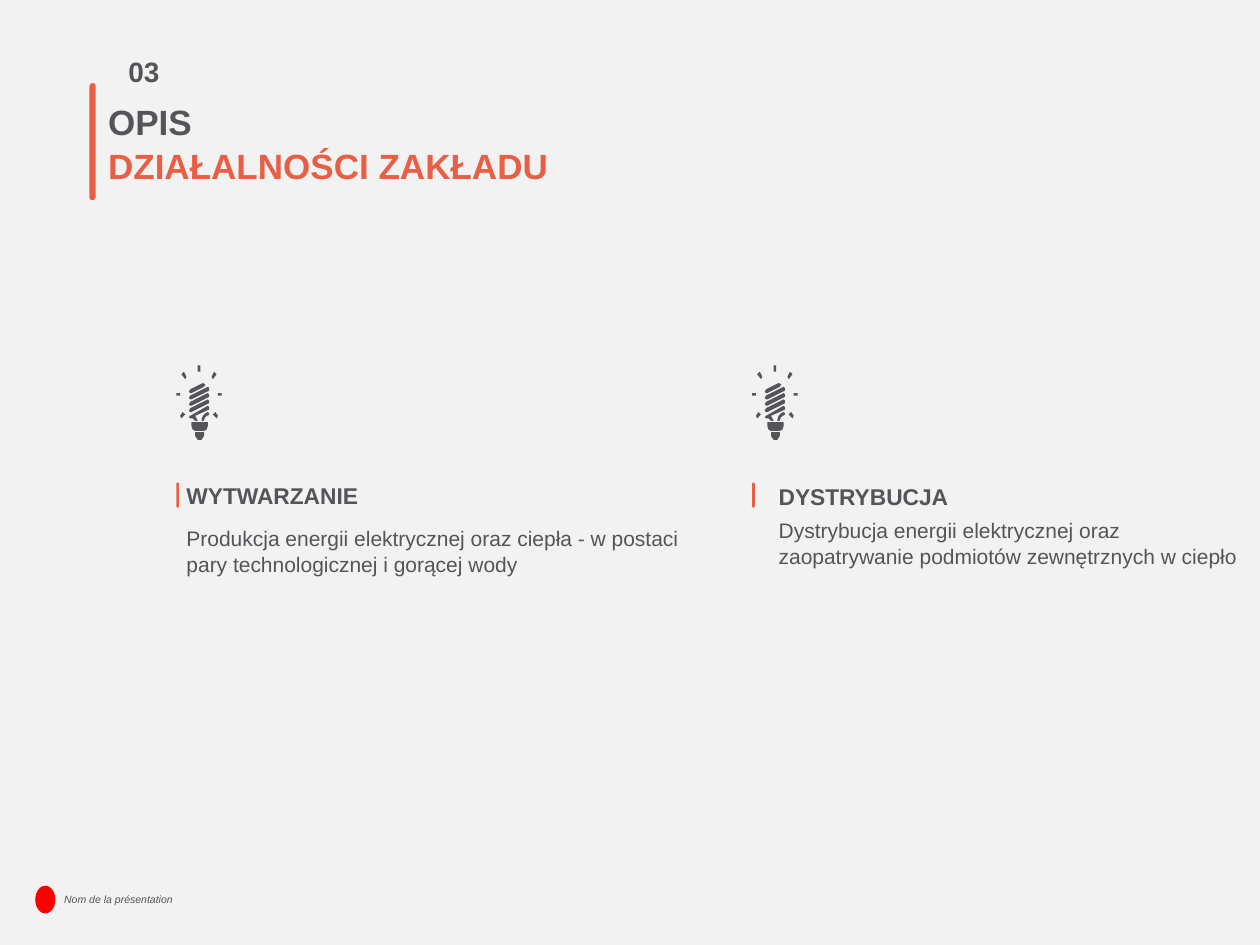
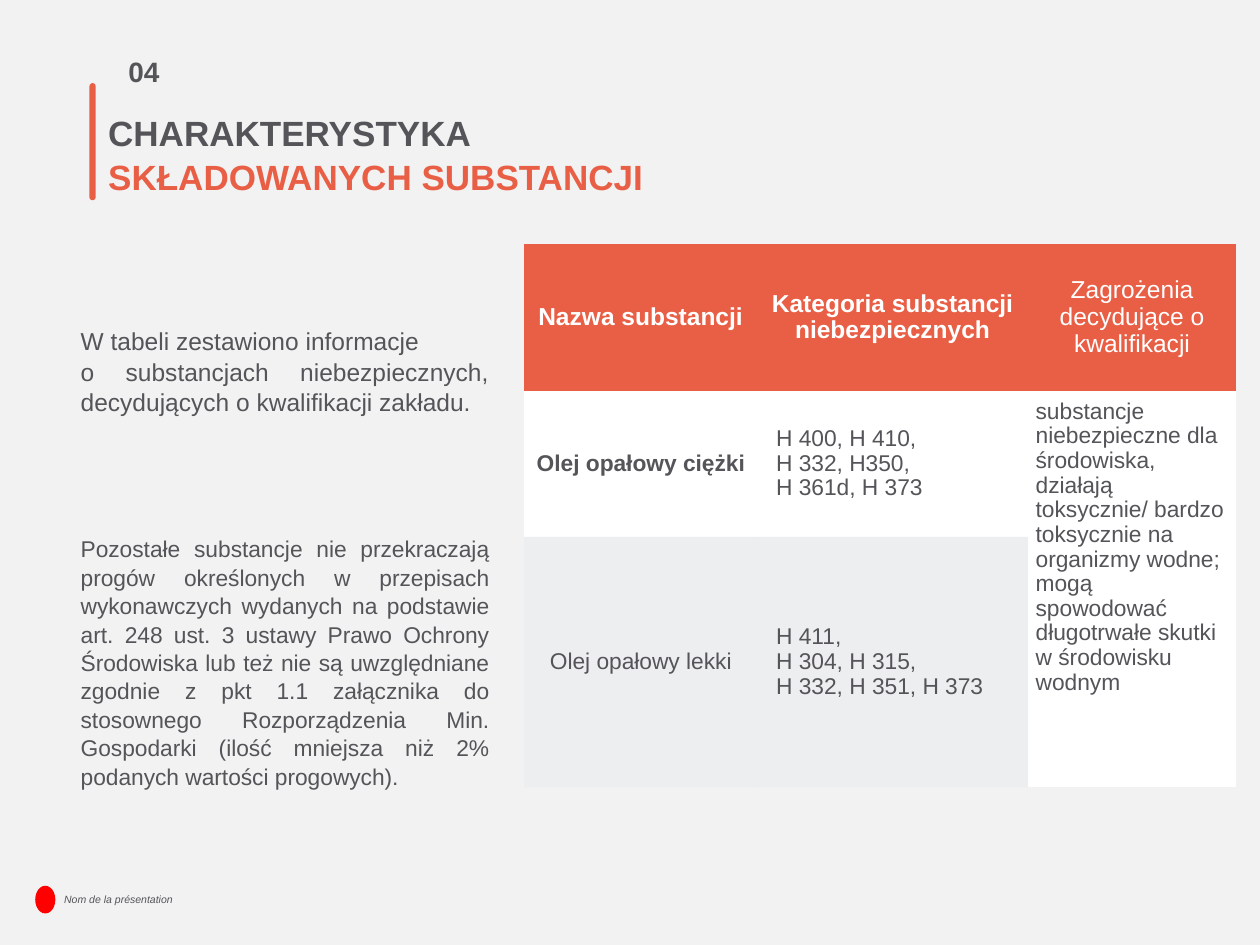
import dataclasses
import typing

import lxml.etree
import pptx
import pptx.dml.color
import pptx.enum.shapes
import pptx.enum.text
import pptx.oxml.ns
import pptx.util

Align = pptx.enum.text.PP_ALIGN
Anchor = pptx.enum.text.MSO_ANCHOR
Preset = pptx.enum.shapes.MSO_SHAPE
Point = tuple[float, float]


# Theme: colours, type sizes and spacing
@dataclasses.dataclass(frozen=True)
class Theme:
    font: str = "Arial"
    background: str = "F2F2F2"
    text: str = "545459"
    accent: str = "E85F46"
    emblem: str = "FF0000"
    white: str = "FFFFFF"
    shaded: str = "E3E5E8"
    shaded_opacity: int = 29
    title_size: int = 20
    number_size: int = 16
    lead_size: int = 14
    heading_size: int = 13
    body_size: int = 12
    footer_size: int = 6
    text_spacing: float = 1.04
    table_spacing: float = 0.97


THEME = Theme()

# Grid: 100 columns by 75 rows of square units
SLIDE_WIDTH = pptx.util.Inches(10)
SLIDE_HEIGHT = pptx.util.Inches(7.5)
UNIT = SLIDE_WIDTH / 100


def units(count: float) -> int:
    return round(count * UNIT)


class Box(typing.NamedTuple):
    column: float
    row: float
    columns: float
    rows: float

    def lengths(self) -> list[int]:
        return [units(value) for value in self]


@dataclasses.dataclass(frozen=True)
class Header:
    number: str
    title: tuple[str, str]
    title_box: Box


@dataclasses.dataclass(frozen=True)
class Activity:
    column: float
    heading: str
    heading_box: Box
    description: str
    description_box: Box


@dataclasses.dataclass(frozen=True)
class Cell:
    text: str
    fill: str = THEME.white
    color: str = THEME.text
    size: int = THEME.heading_size
    bold: bool = False
    align: Align = Align.CENTER
    anchor: Anchor = Anchor.MIDDLE
    indent: float = 0
    opacity: int = 100


HEADERS = [
    Header("03", ("OPIS", "DZIAŁALNOŚCI ZAKŁADU"), Box(7.6, 4.1, 42.3, 14.4)),
    Header("04", ("CHARAKTERYSTYKA", "SKŁADOWANYCH SUBSTANCJI"), Box(7.6, 5, 46.8, 14.4)),
]

ACTIVITIES = [
    Activity(14, "WYTWARZANIE", Box(14.6, 38.2, 16.1, 2.2),
             "Produkcja energii elektrycznej oraz ciepła - w postaci "
             "pary technologicznej i gorącej wody", Box(14.6, 41.4, 40.9, 9.3)),
    Activity(59.7, "DYSTRYBUCJA", Box(61.6, 37.9, 17.1, 2.9),
             "Dystrybucja energii elektrycznej oraz "
             "zaopatrywanie podmiotów zewnętrznych w ciepło", Box(61.6, 40.8, 37.5, 9.3)),
]

INTRODUCTION = ("W tabeli zestawiono informacje\n"
                "o substancjach niebezpiecznych, decydujących o kwalifikacji zakładu.")
REMAINING_SUBSTANCES = (
    "Pozostałe substancje nie przekraczają progów określonych w przepisach "
    "wykonawczych wydanych na podstawie\vart. 248 ust. 3 ustawy Prawo Ochrony "
    "Środowiska lub też nie są uwzględniane zgodnie z pkt 1.1 załącznika do "
    "stosownego Rozporządzenia Min. Gospodarki (ilość mniejsza niż 2% "
    "podanych wartości progowych).")

# Substance table
header_cell = dict(fill=THEME.accent, color=THEME.white, size=THEME.lead_size)
shaded_cell = dict(fill=THEME.shaded, opacity=THEME.shaded_opacity)
category_cell = dict(align=Align.LEFT, indent=0.9)
TABLE_COLUMNS = [18.5, 21.5, 16.5]
TABLE_ROWS = [11.6, 11.6, 19.9]
SUBSTANCES = [
    [Cell("Nazwa substancji", bold=True, **header_cell),
     Cell("Kategoria substancji niebezpiecznych", bold=True, **header_cell),
     Cell("Zagrożenia decydujące o kwalifikacji", **header_cell)],
    [Cell("Olej opałowy ciężki", bold=True),
     Cell("H 400, H 410,\nH 332, H350,\nH 361d, H 373", **category_cell),
     Cell("substancje niebezpieczne dla środowiska, działają toksycznie/ bardzo "
          "toksycznie na organizmy wodne; mogą spowodować długotrwałe skutki "
          "w środowisku wodnym", align=Align.LEFT, anchor=Anchor.TOP)],
    [Cell("Olej opałowy lekki", **shaded_cell),
     Cell("H 411,\nH 304, H 315,\nH 332, H 351, H 373", **category_cell, **shaded_cell)],
]


# Bulb outline, in tenths of a grid unit
def bulb_contours() -> list[list[Point]]:
    right_rays = [
        [(33, 22), (36, 22), (36, 24), (33, 24)],
        [(30, 5), (32, 7), (29, 11), (28, 9)],
        [(31, 37), (33, 40), (32, 42), (29, 39)],
    ]
    left_rays = [[(36 - x, y) for x, y in ray] for ray in right_rays]
    coils = [[(25, y), (26, y + 1), (26, y + 3), (12, y + 10),
              (11, y + 10), (10, y + 9), (11, y + 7)] for y in (17, 22, 27)]
    top_coil = [(21, 14), (23, 15), (22, 17), (12, 22), (11, 22), (10, 21), (11, 19)]
    bottom_coil = [(25, 32), (26, 33), (26, 35), (15, 40), (17, 44),
                   (15, 44), (13, 42), (11, 42), (10, 41), (11, 40)]
    stem = [(25, 37), (26, 38), (26, 39), (23, 41), (22, 43),
            (22, 44), (20, 44), (20, 43), (21, 40), (23, 38)]
    collar = [(12, 45), (25, 45), (25, 48), (24, 51), (22, 52), (15, 52), (13, 51), (12, 48)]
    tip = [(15, 53), (22, 53), (22, 56), (20, 59), (17, 59), (15, 56)]
    top_ray = [(17, 0), (19, 0), (19, 5), (17, 5)]
    return [top_ray, *right_rays, *left_rays, top_coil, *coils, bottom_coil, stem, collar, tip]


# Drawing functions
def rgb(color: str) -> pptx.dml.color.RGBColor:
    return pptx.dml.color.RGBColor.from_string(color)


def paint(shape, color: str) -> None:
    shape.fill.solid()
    shape.fill.fore_color.rgb = rgb(color)
    shape.line.fill.background()
    shape.shadow.inherit = False


def write(frame, text: str, *, size: int, colors: typing.Sequence[str] = (THEME.text,),
          bold: bool = False, italic: bool = False, align: Align = Align.LEFT,
          spacing: float = THEME.text_spacing, before: float = 0, append: bool = False) -> None:
    """Write one paragraph per line; the last colour serves any further lines."""
    for index, line in enumerate(text.split("\n")):
        new = append or index > 0
        paragraph = frame.add_paragraph() if new else frame.paragraphs[0]
        paragraph.alignment = align
        paragraph.line_spacing = spacing
        paragraph.space_before = pptx.util.Pt(before)
        for part_index, part in enumerate(line.split("\v")):
            if part_index:
                paragraph.add_line_break()
            run = paragraph.add_run()
            run.text = part
            run.font.name = THEME.font
            run.font.size = pptx.util.Pt(size)
            run.font.bold = bold
            run.font.italic = italic
            run.font.color.rgb = rgb(colors[min(index, len(colors) - 1)])


def add_frame(slide, box: Box, *, inset: Point = (0.2, 0.2), anchor: Anchor = Anchor.TOP):
    frame = slide.shapes.add_textbox(*box.lengths()).text_frame
    frame.word_wrap = True
    frame.vertical_anchor = anchor
    frame.margin_left = frame.margin_right = units(inset[0])
    frame.margin_top = frame.margin_bottom = units(inset[1])
    return frame


def add_bar(slide, box: Box) -> None:
    bar = slide.shapes.add_shape(Preset.ROUNDED_RECTANGLE, *box.lengths())
    bar.adjustments[0] = 0.5
    paint(bar, THEME.accent)


def add_bulb(slide, column: float, row: float) -> None:
    first, *others = bulb_contours()
    builder = slide.shapes.build_freeform(*first[0], scale=UNIT / 10)
    builder.add_line_segments(first[1:], close=True)
    for contour in others:
        builder.move_to(*contour[0])
        builder.add_line_segments(contour[1:], close=True)
    paint(builder.convert_to_shape(units(column), units(row)), THEME.text)


def add_base_slide(presentation, header: Header):
    slide = presentation.slides.add_slide(presentation.slide_layouts[6])
    slide.background.fill.solid()
    slide.background.fill.fore_color.rgb = rgb(THEME.background)
    # Footer
    footer = add_frame(slide, Box(4.5, 70.4, 24.6, 1.9), inset=(0.6, 0), anchor=Anchor.MIDDLE)
    write(footer, "Nom de la présentation", size=THEME.footer_size, italic=True)
    emblem = slide.shapes.add_shape(Preset.OVAL, *Box(2.8, 70.3, 1.6, 2.2).lengths())
    paint(emblem, THEME.emblem)
    # Title with its number and bar
    add_bar(slide, Box(7.1, 6.6, 0.5, 9.3))
    title = add_frame(slide, header.title_box, inset=(1, 1), anchor=Anchor.MIDDLE)
    write(title, "\n".join(header.title), size=THEME.title_size, bold=True,
          colors=(THEME.text, THEME.accent), spacing=1.05)
    number = add_frame(slide, Box(9.2, 3.3, 4.6, 3.8), inset=(1, 1))
    write(number, header.number, size=THEME.number_size, bold=True, spacing=1)
    return slide


def add_activity(slide, activity: Activity) -> None:
    add_bulb(slide, activity.column, 29)
    add_bar(slide, Box(activity.column, 38.3, 0.2, 2))
    heading = add_frame(slide, activity.heading_box, anchor=Anchor.MIDDLE)
    write(heading, activity.heading, size=THEME.heading_size, bold=True)
    description = add_frame(slide, activity.description_box)
    write(description, activity.description, size=THEME.body_size)


def fill_cell(target, cell: Cell) -> None:
    target.fill.solid()
    target.fill.fore_color.rgb = rgb(cell.fill)
    if cell.opacity < 100:
        color = target.fill._xPr.find(".//" + pptx.oxml.ns.qn("a:srgbClr"))
        alpha = lxml.etree.SubElement(color, pptx.oxml.ns.qn("a:alpha"))
        alpha.set("val", str(cell.opacity * 1000))
    target.margin_left = units(0.6 + cell.indent)
    target.margin_right = units(0.6)
    target.margin_top = target.margin_bottom = units(0.7)
    target.vertical_anchor = cell.anchor
    write(target.text_frame, cell.text, size=cell.size, colors=(cell.color,),
          bold=cell.bold, align=cell.align, spacing=THEME.table_spacing)


def add_substance_table(slide) -> None:
    box = Box(41.6, 19.4, sum(TABLE_COLUMNS), sum(TABLE_ROWS))
    table = slide.shapes.add_table(len(TABLE_ROWS), len(TABLE_COLUMNS), *box.lengths()).table
    # Plain table style without borders
    style = table._tbl.tblPr.find(pptx.oxml.ns.qn("a:tableStyleId"))
    style.text = "{2D5ABB26-0587-4C30-8999-92F81FD0307C}"
    table.first_row = table.horz_banding = False
    for column, width in zip(table.columns, TABLE_COLUMNS):
        column.width = units(width)
    for row, height in zip(table.rows, TABLE_ROWS):
        row.height = units(height)
    table.cell(1, 2).merge(table.cell(2, 2))
    for row_index, cells in enumerate(SUBSTANCES):
        for column_index, cell in enumerate(cells):
            fill_cell(table.cell(row_index, column_index), cell)


def main() -> None:
    presentation = pptx.Presentation()
    presentation.slide_width = SLIDE_WIDTH
    presentation.slide_height = SLIDE_HEIGHT

    # Activities of the plant
    activities_slide = add_base_slide(presentation, HEADERS[0])
    for activity in ACTIVITIES:
        add_activity(activities_slide, activity)

    # Stored substances
    substances_slide = add_base_slide(presentation, HEADERS[1])
    add_substance_table(substances_slide)
    notes = add_frame(substances_slide, Box(6.2, 25.6, 32.8, 43.3))
    write(notes, INTRODUCTION, size=THEME.lead_size, align=Align.JUSTIFY)
    write(notes, REMAINING_SUBSTANCES, size=THEME.heading_size, align=Align.JUSTIFY,
          before=67, append=True)

    presentation.save("out.pptx")


if __name__ == "__main__":
    main()
